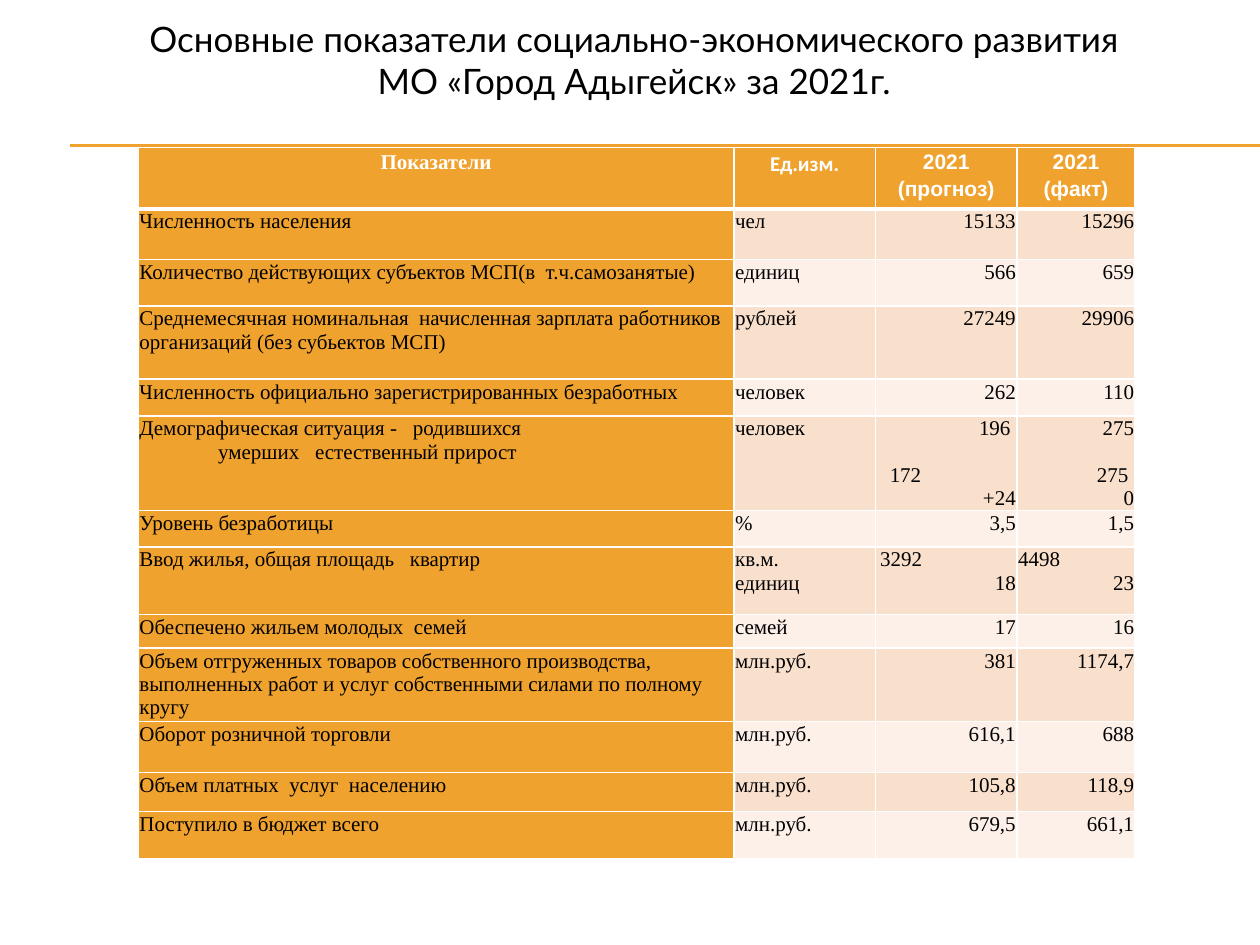
import pptx
import pptx.dml.color
import pptx.enum.shapes
import pptx.enum.text
import pptx.oxml
import pptx.oxml.ns
import pptx.util

Pt = pptx.util.Pt
ALIGN = pptx.enum.text.PP_ALIGN
COLORS = {
    "accent": "F0A22E",
    "band": "F9E0CD",
    "pale": "FCF0E8",
    "white": "FFFFFF",
    "black": "000000",
}


def color(name):
    return pptx.dml.color.RGBColor.from_string(COLORS[name])


def add_text(para, text, font, size, name, bold=False):
    span = para.add_run()
    span.text = text
    span.font.name = font
    span.font.size = Pt(size)
    span.font.bold = bold
    span.font.color.rgb = color(name)


deck = pptx.Presentation()
deck.slide_width, deck.slide_height = Pt(720), Pt(540)
page = deck.slides.add_slide(deck.slide_layouts[5])

# Double rule under the title
for y in (82.8, 83.5):
    rule = page.shapes.add_connector(
        pptx.enum.shapes.MSO_CONNECTOR.STRAIGHT, Pt(40.3), Pt(y), Pt(720), Pt(y))
    rule.line.color.rgb = color("accent")
    rule.line.width = Pt(0.75)
    pptx.oxml.ns.qn("a:effectLst")
    rule._element.spPr.append(pptx.oxml.parse_xml(
        f'<a:effectLst {pptx.oxml.ns.nsdecls("a")}/>'))

# Title
title = page.shapes.title
title.left, title.top, title.width, title.height = Pt(76.3), Pt(6.5), Pt(572.4), Pt(77.8)
frame = title.text_frame
frame.word_wrap = True
frame.auto_size = pptx.enum.text.MSO_AUTO_SIZE.NONE
frame.vertical_anchor = pptx.enum.text.MSO_ANCHOR.TOP
title_lines = ["Основные показатели социально-экономического развития",
               "МО «Город Адыгейск» за 2021г."]
for i, text in enumerate(title_lines):
    para = frame.add_paragraph() if i else frame.paragraphs[0]
    para.alignment = ALIGN.CENTER
    add_text(para, text, "Lato", 20, "black")

# Table content: a cell is a list of lines; a line is plain text
# or (text, left indent, space before) when it is set from the left
header = [["Показатели"], ["Ед.изм."], ["2021", "(прогноз)"], ["2021", "(факт)"]]
header_fonts = ["Times New Roman", "Calibri", "Arial", "Arial"]
rows = [
    (28.8, ["Численность населения"], ["чел"], ["15133"], ["15296"]),
    (26.6, ["Количество действующих субъектов МСП(в  т.ч.самозанятые)"],
     ["единиц"], ["566"], ["659"]),
    (41.8, ["Среднемесячная номинальная  начисленная зарплата работников "
            "организаций (без субьектов МСП)"], ["рублей"], ["27249"], ["29906"]),
    (21, ["Численность официально зарегистрированных безработных"],
     ["человек"], ["262"], ["110"]),
    (54.2, ["Демографическая ситуация -   родившихся",
            ("умерших   естественный прирост", 45, 0)], ["человек"],
     [("196", 58.5, 0), ("172", 7.5, 13.3), "+24"],
     ["275", ("275", 45, 13.3), "0"]),
    (20.8, ["Уровень безработицы"], ["%"], ["3,5"], ["1,5"]),
    (38.6, ["Ввод жилья, общая площадь   квартир"], ["кв.м.", "единиц"],
     [("3292", 2, 0), "18"], [("4498", 0, 0), "23"]),
    (19.2, ["Обеспечено жильем молодых  семей"], ["семей"], ["17"], ["16"]),
    (42, ["Объем отгруженных товаров собственного производства, выполненных "
          "работ и услуг собственными силами по полному кругу"],
     ["млн.руб."], ["381"], ["1174,7"]),
    (29.2, ["Оборот розничной торговли"], ["млн.руб."], ["616,1"], ["688"]),
    (22.3, ["Объем платных  услуг  населению"], ["млн.руб."], ["105,8"], ["118,9"]),
    (26.7, ["Поступило в бюджет всего"], ["млн.руб."], ["679,5"], ["661,1"]),
]
table_rows = [(35.3, *header)] + rows
widths = [340.4, 80.9, 80.9, 67.6]

# Table
table = page.shapes.add_table(
    len(table_rows), len(widths), Pt(79), Pt(84.2),
    Pt(sum(widths)), Pt(sum(row[0] for row in table_rows))).table
table.first_row = False
table.horz_banding = False
for column, width in zip(table.columns, widths):
    column.width = Pt(width)

for r, (height, *cells) in enumerate(table_rows):
    table.rows[r].height = Pt(height)
    is_header = r == 0
    for c, lines in enumerate(cells):
        cell = table.cell(r, c)
        cell.margin_left = cell.margin_right = Pt(2.2 if is_header else 0.7)
        cell.margin_top = Pt(0 if is_header else 0.7)
        cell.margin_bottom = Pt(0)
        cell.fill.solid()
        if is_header or c == 0:
            cell.fill.fore_color.rgb = color("accent")
        else:
            cell.fill.fore_color.rgb = color("band" if r % 2 else "pale")

        # White borders, heavier between header and body
        properties = cell._tc.get_or_add_tcPr()
        for i, side in enumerate(("lnL", "lnR", "lnT", "lnB")):
            heavy = (is_header and side == "lnB") or (r == 1 and side == "lnT")
            properties.insert(i, pptx.oxml.parse_xml(
                f'<a:{side} {pptx.oxml.ns.nsdecls("a")} w="{Pt(3 if heavy else 1)}">'
                f'<a:solidFill><a:srgbClr val="{COLORS["white"]}"/></a:solidFill>'
                f'</a:{side}>'))

        for i, line in enumerate(lines):
            frame = cell.text_frame
            para = frame.add_paragraph() if i else frame.paragraphs[0]
            if is_header:
                para.alignment = ALIGN.CENTER
                para.line_spacing = 1.15
                add_text(para, line, header_fonts[c], 12, "white", True)
                continue
            para.alignment = ALIGN.RIGHT if c > 1 else ALIGN.LEFT
            if isinstance(line, tuple):
                line, indent, before = line
                para.alignment = ALIGN.LEFT
                para.space_before = Pt(before)
                para._p.get_or_add_pPr().set("marL", str(Pt(indent)))
            add_text(para, line, "Times New Roman", 12, "black")

deck.save("out.pptx")
